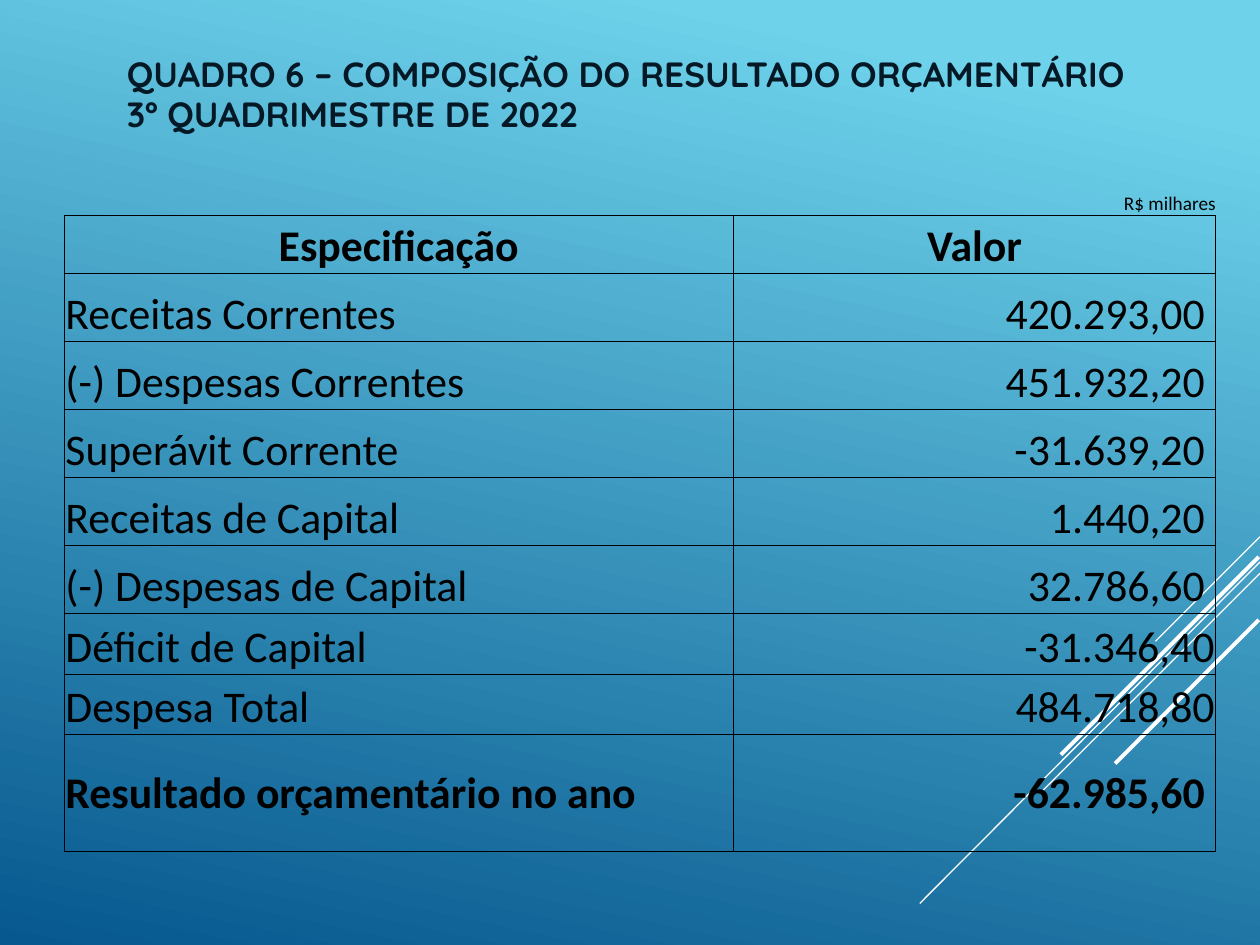
from lxml import etree
from pptx import Presentation, util as u
from pptx.dml.color import RGBColor
from pptx.enum import shapes, text
from pptx.oxml import parse_xml
from pptx.oxml.ns import nsdecls, qn

SKY = RGBColor(0x6E, 0xD2, 0xEB)
DEEP = RGBColor(0x06, 0x58, 0x8E)
NAVY = RGBColor(0x05, 0x18, 0x25)
BLACK = RGBColor(0, 0, 0)
WHITE = RGBColor(255, 255, 255)

TITLE = ["QUADRO 6 – COMPOSIÇÃO DO RESULTADO ORÇAMENTÁRIO", "3º QUADRIMESTRE DE 2022"]
UNIT = "R$ milhares"
HEADER = ("Especificação", "Valor")
RESULTS = [  # label, value, row height
    ("Receitas Correntes", "420.293,00 ", 0.54),
    ("(-) Despesas Correntes", "451.932,20 ", 0.54),
    ("Superávit Corrente", "-31.639,20 ", 0.54),
    ("Receitas de Capital", "1.440,20 ", 0.54),
    ("(-) Despesas de Capital", "32.786,60 ", 0.54),
    ("Déficit de Capital", "-31.346,40", 0.48),
    ("Despesa Total", "484.718,80", 0.48),
    ("Resultado orçamentário no ano", "-62.985,60 ", 0.93),
]
UNIT_HEIGHT, HEADER_HEIGHT = 0.32, 0.46
COLUMNS = (5.31, 1.42, 2.41)
TABLE_LEFT, TABLE_TOP = 0.51, 1.39
STREAKS = [  # start, end, width in points
    ((10, 4.26), (9.17, 5.09), 0.75),
    ((10, 4.46), (7.3, 7.17), 0.75),
    ((10, 4.55), (8.28, 6.27), 0.75),
    ((9.99, 4.42), (8.42, 5.99), 2.25),
    ((9.99, 4.92), (8.85, 6.06), 2.25),
]
LEFT, CENTER, RIGHT = text.PP_ALIGN.LEFT, text.PP_ALIGN.CENTER, text.PP_ALIGN.RIGHT
BOTTOM, MIDDLE = text.MSO_ANCHOR.BOTTOM, text.MSO_ANCHOR.MIDDLE


def write(frame, words, size=25, font="Calibri", color=BLACK, bold=False,
          align=LEFT, spacing=1.0):
    paragraph = frame.paragraphs[0]
    paragraph.alignment = align
    paragraph.line_spacing = spacing
    for number, line in enumerate(words.split("\n")):
        if number:
            paragraph.add_line_break()
        run = paragraph.add_run()
        run.text = line
        run.font.size, run.font.name, run.font.bold = u.Pt(size), font, bold
        run.font.color.rgb = color


def style_cell(cell, sides, inset=0.0, anchor=BOTTOM):
    """Clear the fill and draw thin black borders on the given sides (L, R, T, B)."""
    cell.margin_left = cell.margin_right = cell.margin_top = u.Inches(inset)
    cell.margin_bottom = 0
    cell.vertical_anchor = anchor
    cell.fill.background()
    properties = cell._tc.get_or_add_tcPr()
    for place, side in enumerate("LRTB"):
        paint = (f'<a:solidFill><a:srgbClr val="{BLACK}"/></a:solidFill>'
                 if side in sides else "<a:noFill/>")
        properties.insert(place, parse_xml(
            f'<a:ln{side} {nsdecls("a")} w="{u.Pt(0.5)}">{paint}</a:ln{side}>'))


def add_streak(slide, start, end, width):
    streak = slide.shapes.add_connector(
        shapes.MSO_CONNECTOR.STRAIGHT, *map(u.Inches, start + end))
    streak.line.color.rgb = WHITE
    streak.line.width = u.Pt(width)
    etree.SubElement(streak._element.spPr, qn("a:effectLst"))


def paint_background(slide):
    fill = slide.background.fill
    fill.gradient()
    fill.gradient_angle = 360 - 102
    for stop, color, position in zip(fill.gradient_stops, (SKY, DEEP), (0.1, 1)):
        stop.color.rgb = color
        stop.position = position


def add_results(slide):
    heights = [UNIT_HEIGHT, HEADER_HEIGHT] + [height for *_, height in RESULTS]
    table = slide.shapes.add_table(
        len(heights), len(COLUMNS), u.Inches(TABLE_LEFT), u.Inches(TABLE_TOP),
        u.Inches(sum(COLUMNS)), u.Inches(sum(heights))).table
    table.first_row = table.horz_banding = False
    for column, width in zip(table.columns, COLUMNS):
        column.width = u.Inches(width)
    for row, height in zip(table.rows, heights):
        row.height = u.Inches(height)

    for cell in table.rows[0].cells:
        style_cell(cell, "B")
    write(table.cell(0, 2).text_frame, UNIT, size=11, align=RIGHT)

    lines = [HEADER] + [(label, value) for label, value, _ in RESULTS]
    for number, (label, value) in enumerate(lines, start=1):
        is_header, is_total = number == 1, number == len(lines)
        for cell in table.rows[number].cells:
            style_cell(cell, "LRTB", inset=0 if is_header else 0.01,
                       anchor=MIDDLE if is_total else BOTTOM)
        table.cell(number, 1).merge(table.cell(number, 2))
        aligns = (CENTER, CENTER) if is_header else (LEFT, RIGHT)
        for column, (words, align) in enumerate(zip((label, value), aligns)):
            write(table.cell(number, column).text_frame, words,
                  bold=is_header or is_total, align=align)


def main():
    deck = Presentation()
    deck.slide_width, deck.slide_height = u.Inches(10), u.Inches(7.5)
    slide = deck.slides.add_slide(deck.slide_layouts[6])
    paint_background(slide)
    for start, end, width in STREAKS:
        add_streak(slide, start, end, width)

    title = slide.shapes.add_textbox(*map(u.Inches, (0.91, 0.59, 8.5, 0.33))).text_frame
    title.word_wrap = True
    title.vertical_anchor = MIDDLE
    write(title, "\n".join(TITLE), size=20, font="Quicksand", color=NAVY,
          bold=True, spacing=0.95)

    add_results(slide)
    deck.save("out.pptx")


if __name__ == "__main__":
    main()
